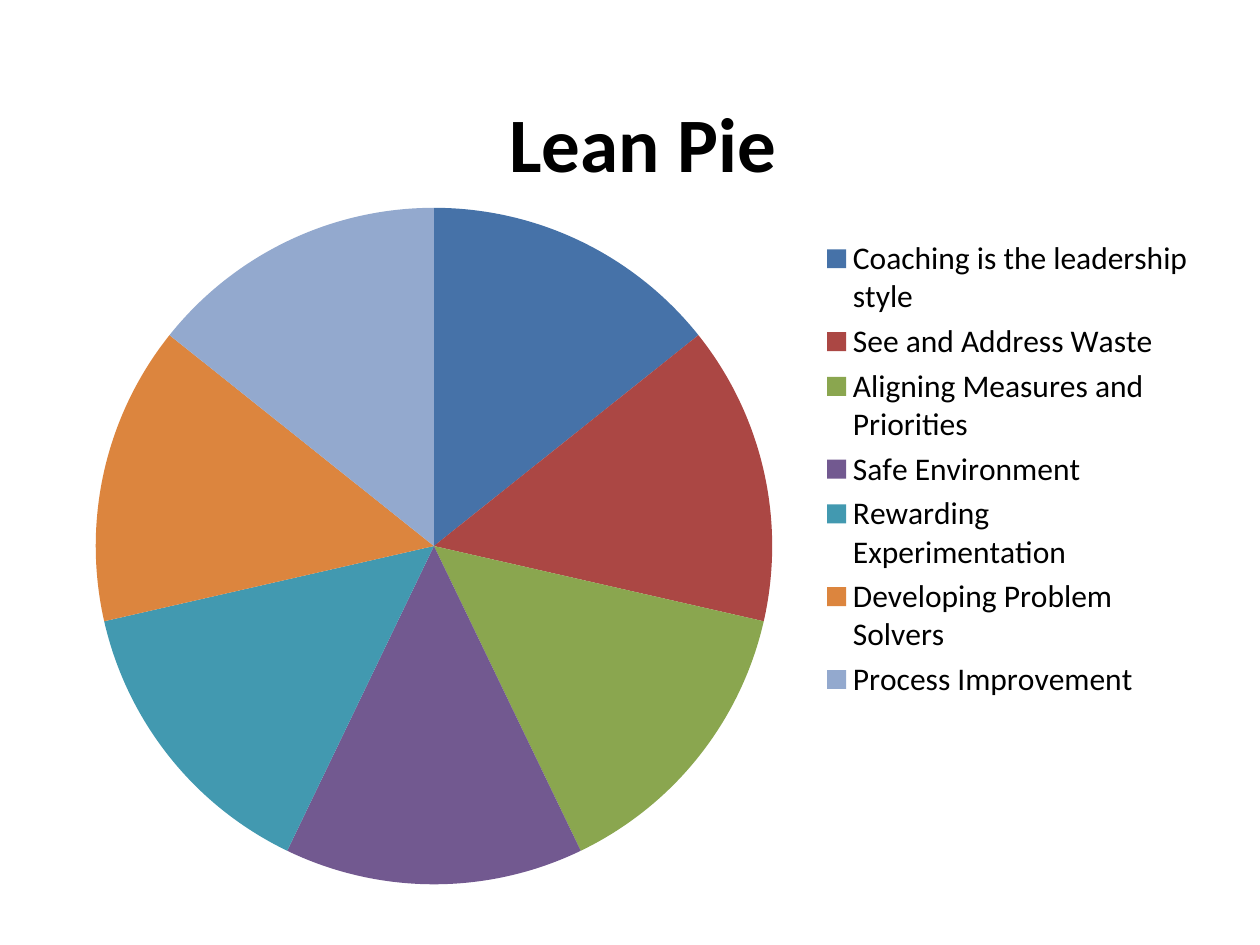
from dataclasses import dataclass

from lxml.etree import SubElement
from pptx import Presentation
from pptx.chart.data import CategoryChartData
from pptx.dml.color import RGBColor
from pptx.enum.chart import XL_CHART_TYPE as ChartType, XL_LEGEND_POSITION as LegendPosition
from pptx.oxml import parse_xml
from pptx.oxml.ns import nsdecls, qn
from pptx.util import Inches, Pt


@dataclass(frozen=True)
class Theme:
    font: str = "Calibri"
    text: str = "000000"
    title_size: int = 44
    legend_size: int = 18


THEME = Theme()
TITLE = "Lean Pie"
SHARE = 14
SLICES = {
    "Coaching is the leadership style": "4672A8",
    "See and Address Waste": "AB4744",
    "Aligning Measures and Priorities": "8AA64F",
    "Safe Environment": "725990",
    "Rewarding Experimentation": "4299B0",
    "Developing Problem Solvers": "DC853E",
    "Process Improvement": "93A9CE",
}

# Left, top, width, height in inches on the slide
CHART_AREA = (0.42, 0.21, 9.17, 6.96)
PIE_AREA = (0.76, 1.65, 5.37, 5.37)
LEGEND_AREA = (6.48, 1.85, 3.03, 3.75)
TITLE_CORNER = (3.93, 0.6)


def style_font(font, size, bold=False):
    font.name = THEME.font
    font.size = Pt(size)
    font.bold = bold
    font.color.rgb = RGBColor.from_string(THEME.text)


def place(part, index, area, inner=False):
    """Fix a chart part at slide inches, stored as fractions of the chart."""
    for old_layout in part.findall(qn("c:layout")):
        part.remove(old_layout)
    layout = parse_xml(f"<c:layout {nsdecls('c')}><c:manualLayout/></c:layout>")
    manual = layout[0]
    left, top, width, height = CHART_AREA
    offsets = (area[0] - left) / width, (area[1] - top) / height
    sizes = [length / whole for length, whole in zip(area[2:], (width, height))]
    settings = [("layoutTarget", "inner")] if inner else []
    settings += [("xMode", "edge"), ("yMode", "edge")]
    settings += zip("xywh", (*offsets, *sizes))
    for tag, value in settings:
        SubElement(manual, qn(f"c:{tag}")).set("val", str(value))
    part.insert(index, layout)


def add_pie(slide):
    shares = CategoryChartData()
    shares.categories = list(SLICES)
    shares.add_series(TITLE, [SHARE] * len(SLICES))
    frame = slide.shapes.add_chart(ChartType.PIE, *map(Inches, CHART_AREA), shares)
    pie = frame.chart
    style_font(pie.font, THEME.legend_size)
    plot = pie.plots[0]
    plot.vary_by_categories = True
    for index, color in enumerate(SLICES.values()):
        fill = plot.series[0].points[index].format.fill
        fill.solid()
        fill.fore_color.rgb = RGBColor.from_string(color)
    place(pie._chartSpace.chart.plotArea, 0, PIE_AREA, inner=True)
    return pie


def add_title(pie):
    pie.has_title = True
    title = pie.chart_title
    heading = title.text_frame.paragraphs[0].add_run()
    heading.text = TITLE
    style_font(heading.font, THEME.title_size, bold=True)
    title.include_in_layout = False
    place(title._element, 1, TITLE_CORNER)


def add_legend(pie):
    pie.has_legend = True
    legend = pie.legend
    legend.position = LegendPosition.RIGHT
    legend.include_in_layout = False
    style_font(legend.font, THEME.legend_size)
    place(legend._element, 1, LEGEND_AREA)


def main():
    deck = Presentation()
    deck.slide_width, deck.slide_height = Inches(10), Inches(7.5)
    slide = deck.slides.add_slide(deck.slide_layouts[6])
    pie = add_pie(slide)
    add_title(pie)
    add_legend(pie)
    deck.save("out.pptx")


if __name__ == "__main__":
    main()
